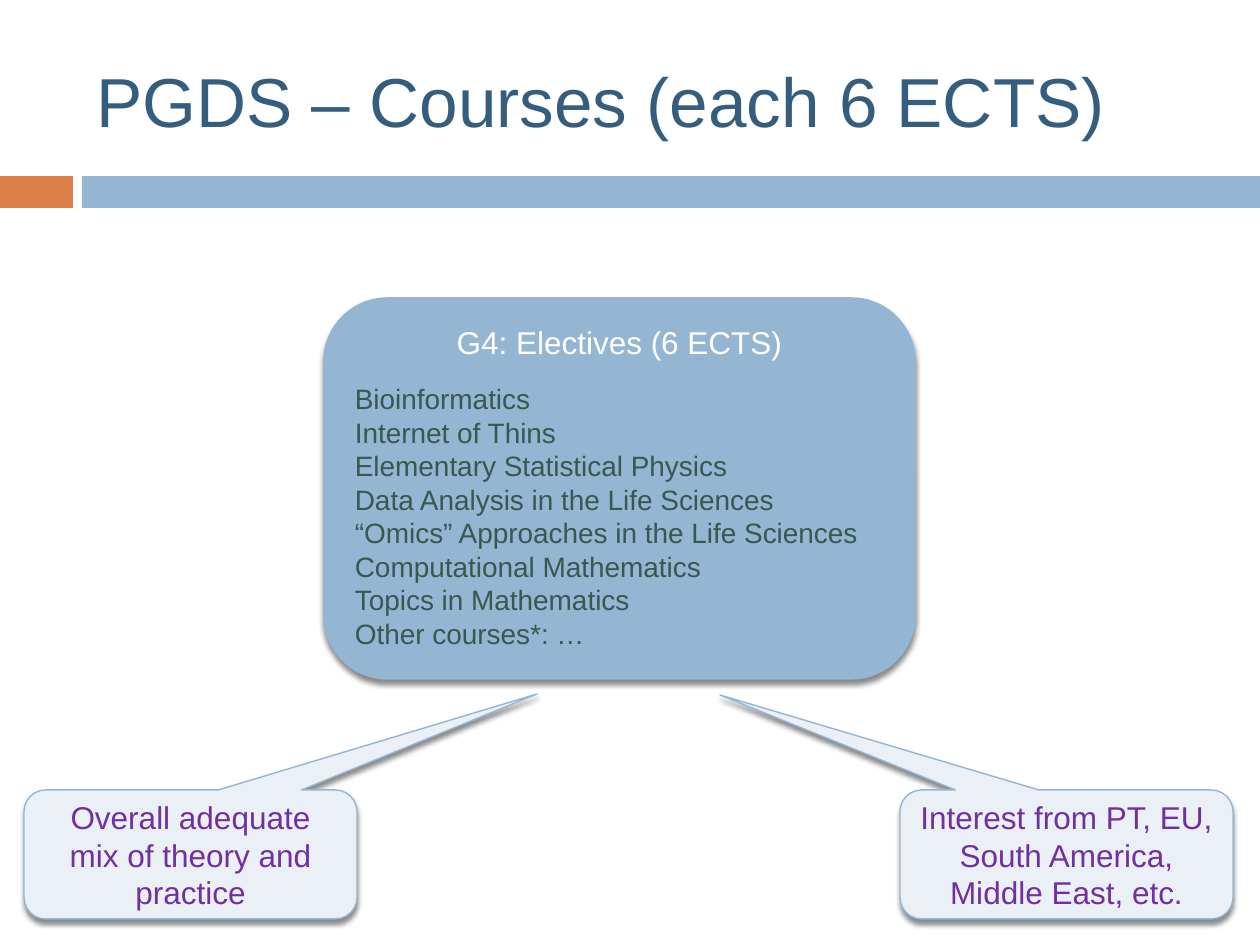
from lxml import etree
from pptx import Presentation
from pptx.dml.color import RGBColor
from pptx.enum.shapes import MSO_SHAPE
from pptx.enum.text import MSO_ANCHOR, PP_ALIGN
from pptx.oxml.ns import qn
from pptx.util import Emu, Pt

RECT = MSO_SHAPE.RECTANGLE
ROUND = MSO_SHAPE.ROUNDED_RECTANGLE
CALLOUT = MSO_SHAPE.ROUNDED_RECTANGULAR_CALLOUT
TOP, MIDDLE = MSO_ANCHOR.TOP, MSO_ANCHOR.MIDDLE
LEFT, CENTER = PP_ALIGN.LEFT, PP_ALIGN.CENTER

PX_PER_INCH = 126
FONT = "Arial"
COLORS = {
    "accent": "DD8047",
    "blue": "94B6D2",
    "pale": "EAF0F6",
    "title": "355D7E",
    "white": "FFFFFF",
    "course": "3A5750",
    "note": "7030A0",
    "shadow": "000000",
}
COURSES = [
    "Bioinformatics",
    "Internet of Thins",
    "Elementary Statistical Physics",
    "Data Analysis in the Life Sciences",
    "“Omics” Approaches in the Life Sciences",
    "Computational Mathematics",
    "Topics in Mathematics",
    "Other courses*: …",
]


def px(n):
    return Emu(round(n * 914400 / PX_PER_INCH))


def rgb(name):
    return RGBColor.from_string(COLORS[name])


def write(p, text, size=18, color="white", align=LEFT, after=0):
    p.alignment = align
    p.space_after = Pt(after)
    r = p.add_run()
    r.text = text
    r.font.name = FONT
    r.font.size = Pt(size)
    r.font.color.rgb = rgb(color)


class Deck:
    def __init__(self, width, height):
        self.prs = Presentation()
        self.prs.slide_width, self.prs.slide_height = px(width), px(height)
        self.s = self.prs.slides.add_slide(self.prs.slide_layouts[6])

    def shape(self, kind, box, fill, line=None, shadow=False):
        sp = self.s.shapes.add_shape(kind, *map(px, box))
        sp.shadow.inherit = False
        sp.fill.solid()
        sp.fill.fore_color.rgb = rgb(fill)
        if line:
            sp.line.color.rgb = rgb(line)
            sp.line.width = Pt(0.79)
        else:
            sp.line.fill.background()
        if shadow:
            self.drop_shadow(sp)
        return sp

    def drop_shadow(self, sp):
        effects = sp._element.spPr.find(qn("a:effectLst"))
        outer = etree.SubElement(
            effects, qn("a:outerShdw"), blurRad=str(Pt(3)), dist=str(Pt(2.4)),
            dir="5400000", algn="ctr", rotWithShape="0")
        color = etree.SubElement(outer, qn("a:srgbClr"), val=COLORS["shadow"])
        etree.SubElement(color, qn("a:alpha"), val="45000")

    def frame(self, sp, anchor):
        tf = sp.text_frame
        tf.word_wrap = True
        tf.vertical_anchor = anchor
        return tf

    def title(self, box, text):
        sp = self.s.shapes.add_textbox(*map(px, box))
        tf = self.frame(sp, MIDDLE)
        write(tf.paragraphs[0], text, size=39.6, color="title")

    def course_box(self, box, heading, courses):
        sp = self.shape(ROUND, box, "blue", line="blue", shadow=True)
        tf = self.frame(sp, TOP)
        write(tf.paragraphs[0], heading, align=CENTER, after=12)
        for course in courses:
            write(tf.add_paragraph(), course, size=16, color="course")

    def callout(self, box, tip, text):
        sp = self.shape(CALLOUT, box, "pale", line="blue", shadow=True)
        x, y, w, h = box
        sp.adjustments[0] = (tip[0] - x) / w - 0.5
        sp.adjustments[1] = (tip[1] - y) / h - 0.5
        sp.adjustments[2] = 0.167
        tf = self.frame(sp, MIDDLE)
        write(tf.paragraphs[0], text, color="note", align=CENTER)


def main():
    deck = Deck(1260, 945)
    deck.shape(RECT, (0, 176, 73, 32), "accent")
    deck.shape(RECT, (82, 176, 1178, 32), "blue")
    deck.title((84, 32, 1124, 136), "PGDS – Courses (each 6 ECTS)")
    deck.course_box((324, 298, 591, 381), "G4: Electives (6 ECTS)", COURSES)
    deck.callout((900, 790, 333, 129), (720, 695),
                 "Interest from PT, EU, South America, Middle East, etc.")
    deck.callout((24, 790, 333, 129), (537, 694),
                 "Overall adequate mix of theory and practice")
    deck.prs.save("out.pptx")


if __name__ == "__main__":
    main()
